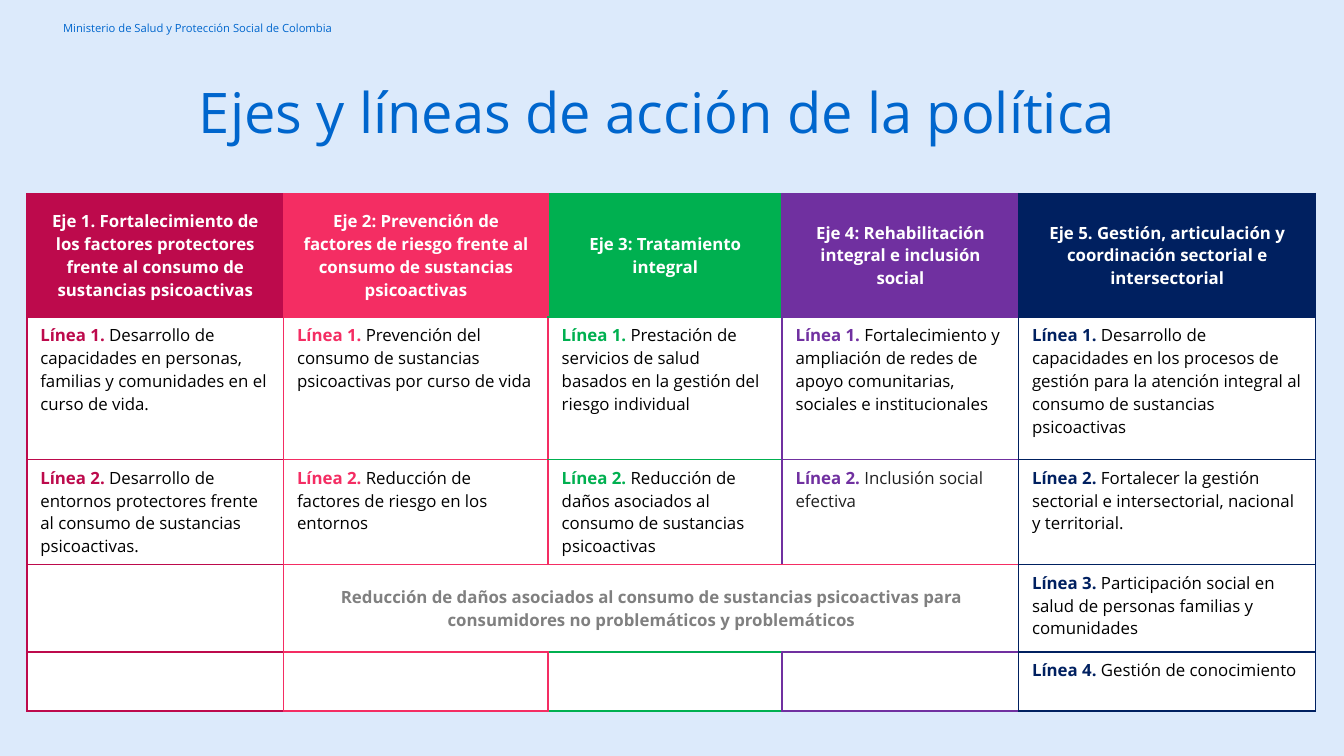
from lxml import etree
from pptx import Presentation
from pptx.dml.color import RGBColor
from pptx.enum import text as t
from pptx.oxml import ns
from pptx.util import Inches, Pt

FONT = "Open Sans"
BLUE, WHITE, BLACK, GREY = "0066CD", "FFFFFF", "000000", "808080"
CRIMSON, PINK, GREEN, PURPLE, NAVY = "BD0A4C", "F42D63", "00B050", "7030A0", "002060"

AXIS_COLOURS = [CRIMSON, PINK, GREEN, PURPLE, NAVY]
VERTICAL_RULES = [CRIMSON, PINK, PINK, PURPLE, NAVY, NAVY]
COLUMN_WIDTHS = [1.91, 1.97, 1.74, 1.76, 2.21]
ROW_HEIGHTS = [0.92, 1.06, 0.46, 0.65, 0.44]
SHARED_ROW = 3

AXES = [
    ("Eje 1. Fortalecimiento de los factores protectores frente al consumo de sustancias psicoactivas",
     ["Desarrollo de capacidades en personas, familias y comunidades en el curso de vida.",
      "Desarrollo de entornos protectores frente al consumo de sustancias psicoactivas."]),
    ("Eje 2: Prevención de factores de riesgo frente al consumo de sustancias psicoactivas",
     ["Prevención del consumo de sustancias psicoactivas por curso de vida",
      "Reducción de factores de riesgo en los entornos"]),
    ("Eje 3: Tratamiento integral",
     ["Prestación de servicios de salud basados en la gestión del riesgo individual",
      "Reducción de daños asociados al consumo de sustancias psicoactivas"]),
    ("Eje 4: Rehabilitación integral e inclusión social",
     ["Fortalecimiento y ampliación de redes de apoyo comunitarias, sociales e institucionales",
      "Inclusión social efectiva"]),
    ("Eje 5. Gestión, articulación y coordinación sectorial e intersectorial",
     ["Desarrollo de capacidades en los procesos de gestión para la atención integral "
      "al consumo de sustancias psicoactivas",
      "Fortalecer la gestión sectorial e intersectorial, nacional y territorial.",
      "Participación social en salud de personas familias y comunidades",
      "Gestión de conocimiento"]),
]
SHARED_LINE = ("Reducción de daños asociados al consumo de sustancias psicoactivas "
               "para consumidores no problemáticos y problemáticos")


def colour(value):
    return RGBColor.from_string(value)


def add_text(paragraph, content, size=9, color=BLACK, bold=False, align=t.PP_ALIGN.LEFT):
    paragraph.alignment = align
    run = paragraph.add_run()
    run.text = content
    run.font.name = FONT
    run.font.size = Pt(size)
    run.font.bold = bold
    run.font.color.rgb = colour(color)


def format_frame(frame):
    frame.word_wrap = True
    frame.auto_size = t.MSO_AUTO_SIZE.NONE
    frame.vertical_anchor = t.MSO_ANCHOR.MIDDLE
    frame.margin_left = frame.margin_right = Inches(0.07)
    frame.margin_top = frame.margin_bottom = Inches(0.04)


def add_source(slide):
    box = slide.shapes.add_textbox(Inches(0.4), Inches(0.11), Inches(2.34), Inches(0.2))
    format_frame(box.text_frame)
    add_text(box.text_frame.paragraphs[0], "Ministerio de Salud y Protección Social de Colombia",
             size=6, color=BLUE)


def add_title(slide):
    title = slide.shapes.title
    title.left, title.top = Inches(1.41), Inches(0.51)
    title.width, title.height = Inches(7.81), Inches(0.7)
    format_frame(title.text_frame)
    paragraph = title.text_frame.paragraphs[0]
    paragraph.line_spacing = 0.9
    add_text(paragraph, "Ejes y líneas de acción de la política", size=30, color=BLUE)


def set_borders(cell, left, right, horizontal):
    properties = cell._tc.get_or_add_tcPr()
    sides = [("L", left), ("R", right), ("T", horizontal), ("B", horizontal)]
    for index, (side, color) in enumerate(sides):
        line = etree.Element(ns.qn(f"a:ln{side}"), w=str(Pt(1)))
        fill = etree.SubElement(line, ns.qn("a:solidFill"))
        etree.SubElement(fill, ns.qn("a:srgbClr"), val=color)
        properties.insert(index, line)


def style_cell(cell, row, column):
    cell.fill.solid()
    cell.fill.fore_color.rgb = colour(AXIS_COLOURS[column] if row == 0 else WHITE)
    left, right, horizontal = *VERTICAL_RULES[column:column + 2], AXIS_COLOURS[column]
    if row == SHARED_ROW and 1 <= column <= 3:
        left, right, horizontal = PINK, NAVY, PINK
    set_borders(cell, left, right, horizontal)


def add_centred_text(cell, content, color):
    cell.vertical_anchor = t.MSO_ANCHOR.MIDDLE
    add_text(cell.text_frame.paragraphs[0], content, color=color, bold=True,
             align=t.PP_ALIGN.CENTER)


def add_action_line(cell, number, content, color):
    paragraph = cell.text_frame.paragraphs[0]
    add_text(paragraph, f"Línea {number}. ", color=color, bold=True)
    add_text(paragraph, content, color="212121" if content == "Inclusión social efectiva" else BLACK)


def add_axes_table(slide):
    frame = slide.shapes.add_table(len(ROW_HEIGHTS), len(COLUMN_WIDTHS), Inches(0.2), Inches(1.44),
                                   Inches(sum(COLUMN_WIDTHS)), Inches(sum(ROW_HEIGHTS)))
    table = frame.table
    table.first_row = table.horz_banding = False
    for column, width in zip(table.columns, COLUMN_WIDTHS):
        column.width = Inches(width)
    for row, height in zip(table.rows, ROW_HEIGHTS):
        row.height = Inches(height)

    for row in range(len(ROW_HEIGHTS)):
        for column in range(len(COLUMN_WIDTHS)):
            style_cell(table.cell(row, column), row, column)
    for column, (heading, lines) in enumerate(AXES):
        add_centred_text(table.cell(0, column), heading, WHITE)
        for number, content in enumerate(lines, 1):
            add_action_line(table.cell(number, column), number, content, AXIS_COLOURS[column])

    shared = table.cell(SHARED_ROW, 1)
    shared.merge(table.cell(SHARED_ROW, 3))
    add_centred_text(shared, SHARED_LINE, GREY)


def main():
    presentation = Presentation()
    presentation.slide_width = Inches(10)
    presentation.slide_height = presentation.slide_width * 9 // 16
    slide = presentation.slides.add_slide(presentation.slide_layouts[5])
    slide.background.fill.solid()
    slide.background.fill.fore_color.rgb = colour("DCEAFB")
    add_source(slide)
    add_title(slide)
    add_axes_table(slide)
    presentation.save("out.pptx")


if __name__ == "__main__":
    main()
